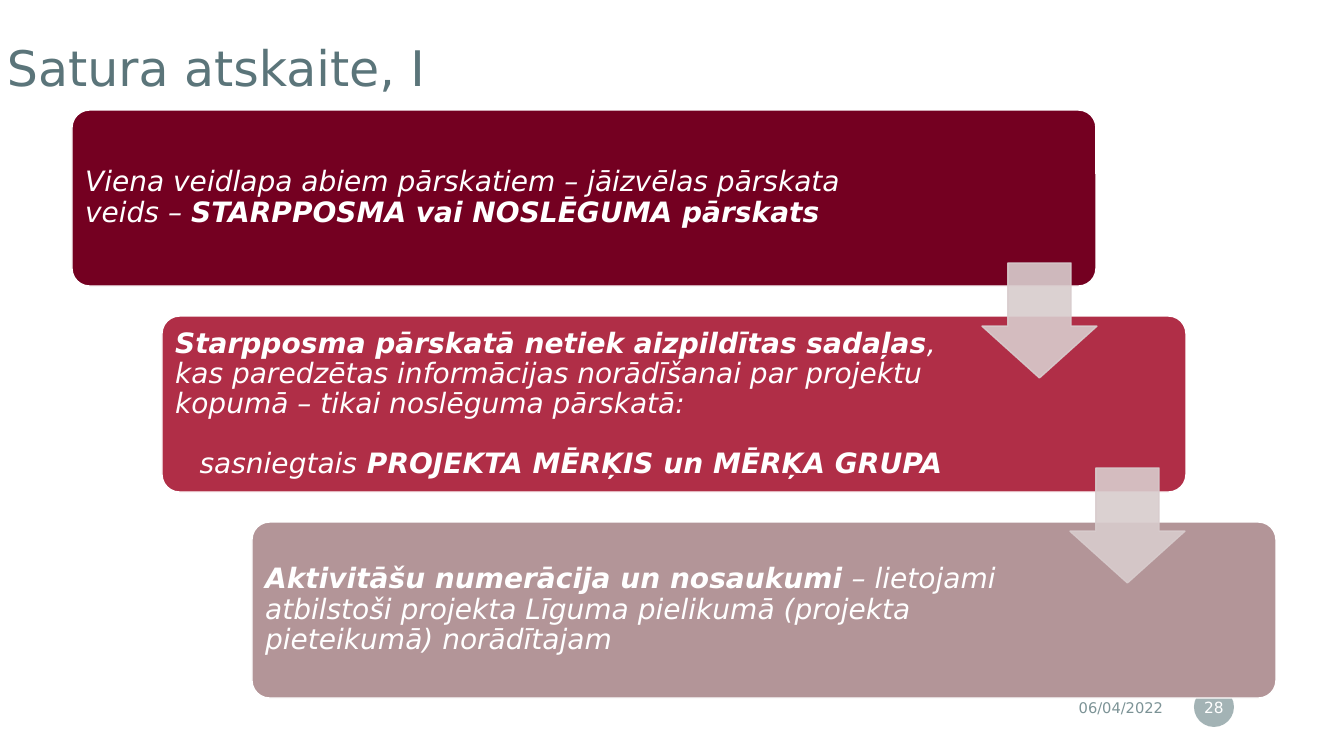
import pptx
import pptx.dml.color
import pptx.enum.shapes
import pptx.enum.text
import pptx.oxml
import pptx.oxml.ns
import pptx.util

RGBColor = pptx.dml.color.RGBColor
Shapes = pptx.enum.shapes.MSO_SHAPE
Align = pptx.enum.text.PP_ALIGN
Anchor = pptx.enum.text.MSO_ANCHOR

WHITE = RGBColor(0xFF, 0xFF, 0xFF)
WINE = RGBColor(0x74, 0x00, 0x21)
CRIMSON = RGBColor(0xB0, 0x2E, 0x47)
DUSTY_ROSE = RGBColor(0xB3, 0x95, 0x98)
ARROW_GREY = RGBColor(0xD8, 0xCC, 0xCD)
TITLE_TEAL = RGBColor(0x5B, 0x75, 0x7A)
FOOTER_TEAL = RGBColor(0x7C, 0x93, 0x96)
FONT = "DejaVu Sans"

TITLE = "Satura atskaite, I"
DATE = "06/04/2022"
PAGE = "28"

# Each step: fill, right text margin in px, paragraphs of (text, bold) runs
STEPS = [
    (WINE, 188, [
        [("Viena veidlapa abiem pārskatiem – jāizvēlas pārskata veids – ", False),
         ("STARPPOSMA vai NOSLĒGUMA pārskats", True)],
    ]),
    (CRIMSON, 214, [
        [("Starpposma pārskatā netiek aizpildītas sadaļas", True),
         (", kas paredzētas informācijas norādīšanai par projektu kopumā"
          " – tikai noslēguma pārskatā:", False)],
        [("sasniegtais", False),
         (" PROJEKTA MĒRĶIS un MĒRĶA GRUPA", True)],
    ]),
    (DUSTY_ROSE, 214, [
        [("Aktivitāšu numerācija un nosaukumi", True),
         (" – lietojami atbilstoši projekta Līguma pielikumā (projekta"
          " pieteikumā) norādītajam", False)],
    ]),
]

STEP_LEFT, STEP_TOP, STEP_WIDTH, STEP_HEIGHT = 72, 110, 1024, 176
STEP_DX, STEP_DY = 90, 206
ARROW_LEFT, ARROW_TOP, ARROW_SIZE = 982, 263, 115
ARROW_DX, ARROW_DY = 88, 205


def px(length):
    return pptx.util.Emu(round(length * 914400 / 100.8))


def set_alpha(fill_format_parent, percent):
    """Make every solid colour below the given element partly opaque."""
    for color in fill_format_parent.iter(pptx.oxml.ns.qn("a:srgbClr")):
        alpha = pptx.oxml.parse_xml(
            f'<a:alpha {pptx.oxml.ns.nsdecls("a")} val="{percent * 1000}"/>')
        color.append(alpha)


def set_frame(frame, anchor, left=0, top=0, right=0, bottom=0):
    frame.word_wrap = True
    frame.auto_size = pptx.enum.text.MSO_AUTO_SIZE.NONE
    frame.vertical_anchor = anchor
    frame.margin_left, frame.margin_top = px(left), px(top)
    frame.margin_right, frame.margin_bottom = px(right), px(bottom)


def style(paragraph, size, color, align):
    paragraph.alignment = align
    paragraph.font.name = FONT
    paragraph.font.size = pptx.util.Pt(size)
    paragraph.font.color.rgb = color


def add_shape(slide, kind, box, fill, line=None):
    shape = slide.shapes.add_shape(kind, *map(px, box))
    shape.shadow.inherit = False
    shape.fill.solid()
    shape.fill.fore_color.rgb = fill
    if line is None:
        shape.line.fill.background()
    else:
        shape.line.color.rgb = line
        shape.line.width = pptx.util.Pt(1)
    return shape


def add_title(slide):
    title = slide.shapes.title
    title.left, title.top, title.width, title.height = map(px, (-13, 35, 1150, 120))
    set_frame(title.text_frame, Anchor.TOP, left=20, top=9, right=20)
    title.text_frame.text = TITLE
    heading = title.text_frame.paragraphs[0]
    heading.line_spacing = 0.9
    style(heading, 35, TITLE_TEAL, Align.LEFT)


def add_footer(slide):
    date = slide.shapes.add_textbox(*map(px, (870, 690, 303, 35)))
    set_frame(date.text_frame, Anchor.MIDDLE, 10, 5, 10, 5)
    date.text_frame.text = DATE
    style(date.text_frame.paragraphs[0], 10.5, FOOTER_TEAL, Align.RIGHT)

    badge = add_shape(slide, Shapes.OVAL, (1194, 687, 40, 40), FOOTER_TEAL)
    set_alpha(badge.fill._xPr, 70)
    set_frame(badge.text_frame, Anchor.MIDDLE, 2, 5, 2, 5)
    badge.text_frame.text = PAGE
    style(badge.text_frame.paragraphs[0], 11, WHITE, Align.CENTER)


def add_step(slide, index, fill, right_margin, paragraphs):
    box = (STEP_LEFT + index * STEP_DX, STEP_TOP + index * STEP_DY,
           STEP_WIDTH, STEP_HEIGHT)
    step = add_shape(slide, Shapes.ROUNDED_RECTANGLE, box, fill, WHITE)
    step.adjustments[0] = 0.1
    frame = step.text_frame
    set_frame(frame, Anchor.MIDDLE, 8, 8, right_margin, 8)
    for number, runs in enumerate(paragraphs):
        paragraph = frame.add_paragraph() if number else frame.paragraphs[0]
        paragraph.line_spacing = 0.9
        if number:
            paragraph.space_before = pptx.util.Pt(21)
        style(paragraph, 20, WHITE, Align.CENTER if number else Align.LEFT)
        paragraph.font.italic = True
        for text, bold in runs:
            run = paragraph.add_run()
            run.text = text
            run.font.bold = bold


def add_arrow(slide, index):
    box = (ARROW_LEFT + index * ARROW_DX, ARROW_TOP + index * ARROW_DY,
           ARROW_SIZE, ARROW_SIZE)
    arrow = add_shape(slide, Shapes.DOWN_ARROW, box, ARROW_GREY, ARROW_GREY)
    arrow.adjustments[0] = 0.55
    arrow.adjustments[1] = 0.45
    set_alpha(arrow.fill._xPr, 90)


def main():
    deck = pptx.Presentation()
    deck.slide_width, deck.slide_height = px(1344), px(756)
    slide = deck.slides.add_slide(deck.slide_layouts[5])
    add_title(slide)
    add_footer(slide)
    for index, step in enumerate(STEPS):
        add_step(slide, index, *step)
    for index in range(len(STEPS) - 1):
        add_arrow(slide, index)
    deck.save("out.pptx")


if __name__ == "__main__":
    main()
